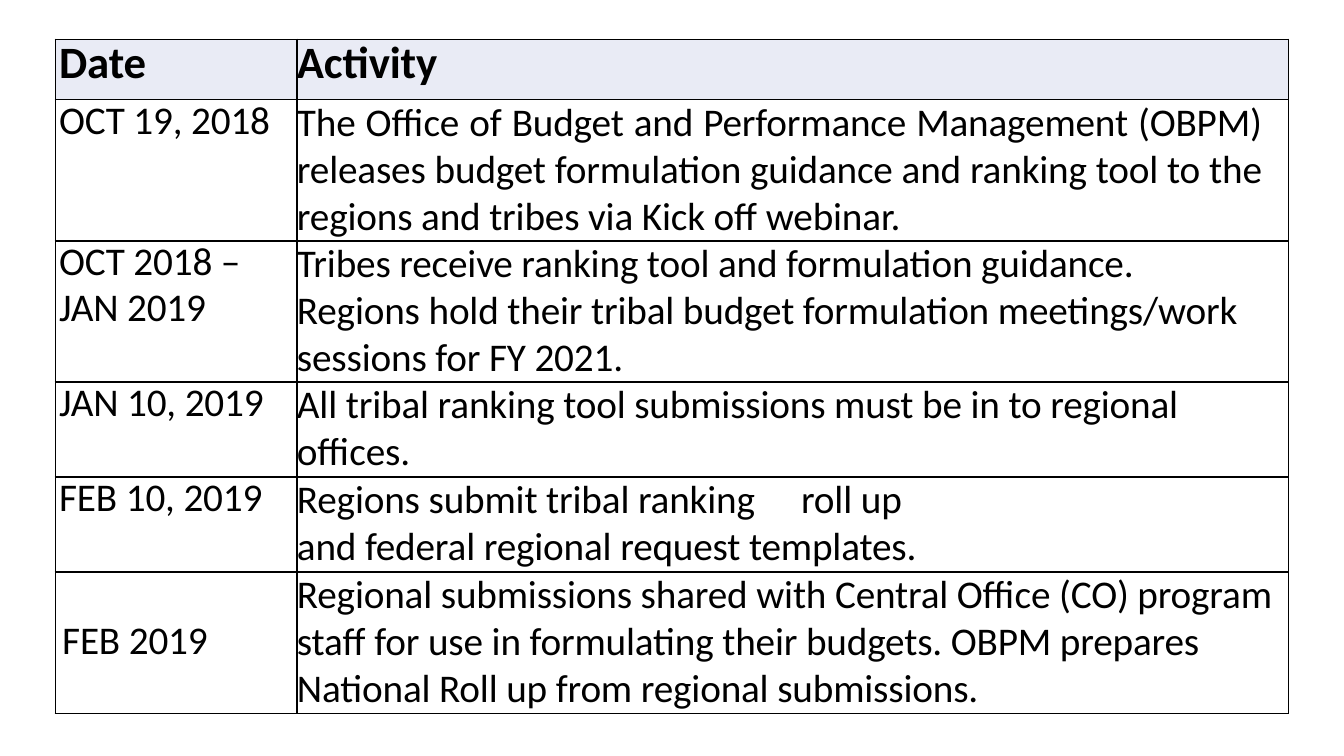
from dataclasses import dataclass

from lxml.etree import SubElement
from pptx import Presentation
from pptx.dml.color import RGBColor
from pptx.enum.text import MSO_ANCHOR, PP_ALIGN
from pptx.oxml import parse_xml
from pptx.oxml.ns import nsdecls, qn
from pptx.util import Inches, Pt

WIDE, HIGH = Inches(13.33), Inches(7.5)


@dataclass(frozen=True)
class Theme:
    font: str = "Calibri"
    ink: str = "000000"
    band: str = "E9EBF5"
    head: float = 32
    body: float = 28
    rule: float = 1
    track: int = -10  # hundredths of a point


@dataclass(frozen=True)
class Entry:
    """One cell: each line holds runs, and lines are split by breaks."""
    lines: tuple[tuple[str, ...], ...]
    lead: float
    left: float = 0
    right: float = 0
    before: float = 0
    tab: float = 0
    align: PP_ALIGN = PP_ALIGN.LEFT
    anchor: MSO_ANCHOR = MSO_ANCHOR.TOP
    bold: bool = False


@dataclass(frozen=True)
class Row:
    share: float  # of the slide's height
    date: Entry
    task: Entry


THEME = Theme()
LEFT, TOP = 0.041, 0.052
COLS = (0.18, 0.7375)
TALL, LOW = 0.1867, 0.1257


def day(*lines: str, left: float = 0.04,
        anchor: MSO_ANCHOR = MSO_ANCHOR.TOP) -> Entry:
    return Entry(tuple((line,) for line in lines), 32.5, left, anchor=anchor)


def task(*lines: tuple[str, ...], right: float = 0, tab: float = 0,
         align: PP_ALIGN = PP_ALIGN.LEFT) -> Entry:
    return Entry(lines, 33.6, right=right, before=0.1, tab=tab, align=align)


ROWS = (
    Row(0.08, Entry((("Date",),), 36.7, 0.04, bold=True),
        Entry((("Activity",),), 36.7, bold=True)),
    Row(TALL, day("OCT 19, 2018"),
        task(("The Office of Budget and ", "Performance ",
              "Management (OBPM) releases budget formulation guidance "
              "and ranking tool ", "to ",
              "the regions and tribes via Kick off ", "webinar."),
             right=0.26, align=PP_ALIGN.JUSTIFY)),
    Row(TALL, day("OCT 2018 –", "JAN 2019"),
        task(("Tribes ", "receive ranking tool and formulation guidance."),
             ("Regions hold their tribal budget formulation meetings/work "
              "sessions ", "for ", "FY 2021."))),
    Row(LOW, day("JAN 10, 2019"),
        task(("All tribal ranking tool submissions must be in ", "to ",
              "regional offices."), right=0.26)),
    Row(LOW, day("FEB 10, 2019"),
        task(("Regions submit tribal ranking\t", "roll ", "up"),
             ("and ", "federal ", "regional request templates."), tab=4.77)),
    Row(TALL, day("FEB 2019", left=0.07, anchor=MSO_ANCHOR.MIDDLE),
        task(("Regional submissions shared with ", "Central ",
              "Office (CO) ", "program staff for ",
              "use in formulating their budgets. OBPM prepares National ",
              "Roll ", "up ", "from ", "regional submissions."))),
)


def edge(cell) -> None:
    """Rule all four sides of a cell."""
    props = cell._tc.get_or_add_tcPr()
    for spot, side in enumerate("LRTB"):
        props.insert(spot, parse_xml(
            f'<a:ln{side} {nsdecls("a")} w="{Pt(THEME.rule)}"><a:solidFill>'
            f'<a:srgbClr val="{THEME.ink}"/></a:solidFill></a:ln{side}>'))


def write(para, text: str, bold: bool) -> None:
    run = para.add_run()
    run.text = text
    font = run.font
    font.name = THEME.font
    font.size = Pt(THEME.head if bold else THEME.body)
    font.bold = bold
    font.color.rgb = RGBColor.from_string(THEME.ink)
    font._element.set("spc", str(THEME.track))


def fill(cell, entry: Entry) -> None:
    cell.margin_left = cell.margin_right = 0
    cell.margin_top = cell.margin_bottom = 0
    cell.vertical_anchor = entry.anchor
    if entry.bold:
        cell.fill.solid()
        cell.fill.fore_color.rgb = RGBColor.from_string(THEME.band)
    else:
        cell.fill.background()
    edge(cell)

    para = cell.text_frame.paragraphs[0]
    para.alignment = entry.align
    para.line_spacing = Pt(entry.lead)
    para.space_before = Pt(entry.before)
    props = para._p.get_or_add_pPr()
    props.set("marL", str(Inches(entry.left)))
    props.set("marR", str(Inches(entry.right)))
    props.set("indent", "0")
    if entry.tab:
        stops = SubElement(props, qn("a:tabLst"))
        SubElement(stops, qn("a:tab"), pos=str(Inches(entry.tab)), algn="l")
    for spot, line in enumerate(entry.lines):
        if spot:
            para.add_line_break()
        for text in line:
            write(para, text, entry.bold)


def main() -> None:
    deck = Presentation()
    deck.slide_width, deck.slide_height = WIDE, HIGH
    slide = deck.slides.add_slide(deck.slide_layouts[6])
    high = sum(row.share for row in ROWS)
    table = slide.shapes.add_table(
        len(ROWS), len(COLS), int(WIDE * LEFT), int(HIGH * TOP),
        int(WIDE * sum(COLS)), int(HIGH * high)).table
    table.horz_banding = False
    for col, share in zip(table.columns, COLS):
        col.width = int(WIDE * share)
    for line, row in zip(table.rows, ROWS):
        line.height = int(HIGH * row.share)
        for cell, entry in zip(line.cells, (row.date, row.task)):
            fill(cell, entry)
    deck.save("out.pptx")


if __name__ == "__main__":
    main()
